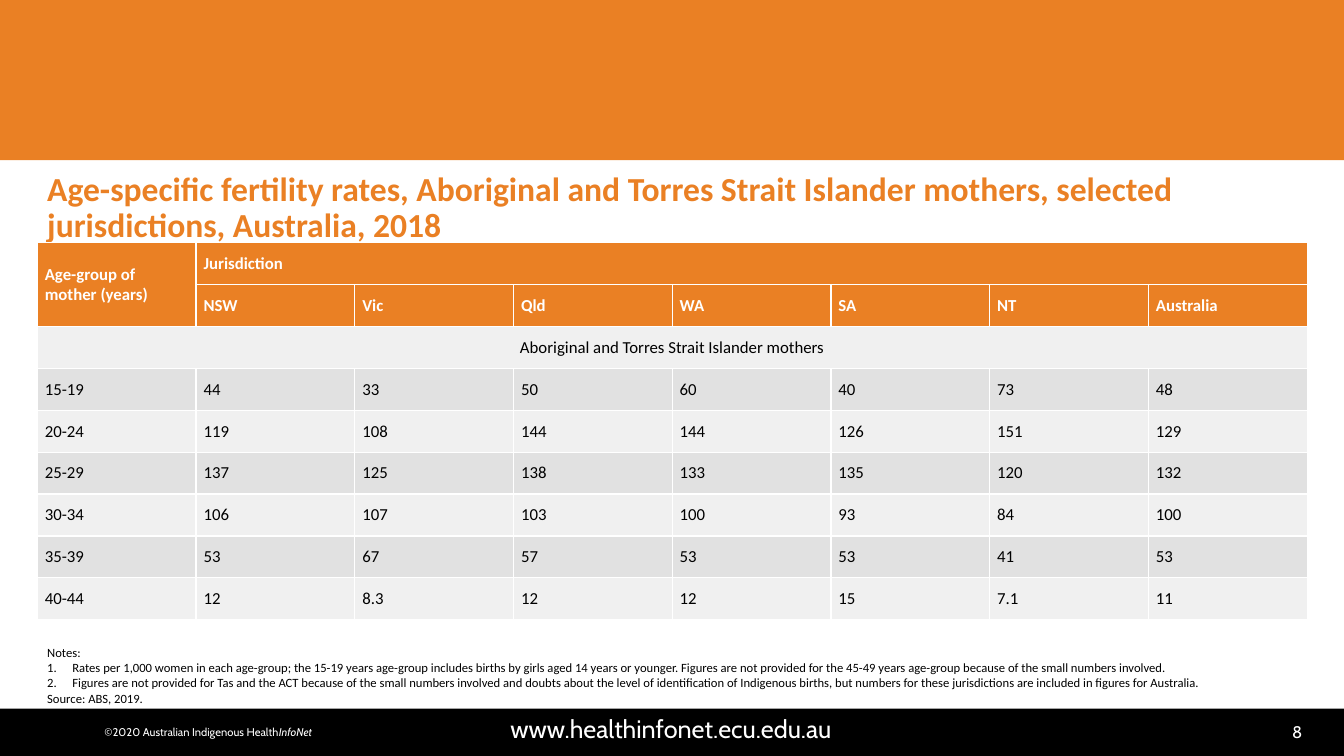
from lxml import etree
from pptx import Presentation
from pptx import util as u
from pptx.dml.color import RGBColor
from pptx.enum import shapes, text
from pptx.oxml.ns import qn

COLOURS = {"orange": "EA8024", "black": "000000", "white": "FFFFFF",
           "light": "F0F0F0", "grey": "E1E1E1"}
TITLE = ("Age-specific fertility rates, Aboriginal and Torres Strait Islander mothers, "
         "selected jurisdictions, Australia, 2018")
AGE_HEADING = "Age-group of\vmother (years)"
JURISDICTIONS = ["NSW", "Vic", "Qld", "WA", "SA", "NT", "Australia"]
GROUP = "Aboriginal and Torres Strait Islander mothers"
RATES = {
    "15-19": [44, 33, 50, 60, 40, 73, 48],
    "20-24": [119, 108, 144, 144, 126, 151, 129],
    "25-29": [137, 125, 138, 133, 135, 120, 132],
    "30-34": [106, 107, 103, 100, 93, 84, 100],
    "35-39": [53, 67, 57, 53, 53, 41, 53],
    "40-44": [12, 8.3, 12, 12, 15, 7.1, 11],
}
NOTES = [
    "Rates per 1,000 women in each age-group; the 15-19 years age-group includes births by "
    "girls aged 14 years or younger. Figures are not provided for the 45-49 years age-group "
    "because of the small numbers involved.",
    "Figures are not provided for Tas and the ACT because of the small numbers involved and "
    "doubts about the level of identification of Indigenous births, but numbers for these "
    "jurisdictions are included in figures for Australia.",
]
SOURCE = "Source: ABS, 2019."
WEBSITE = "www.healthinfonet.ecu.edu.au"
COPYRIGHT, COPYRIGHT_ITALIC = "©2020 Australian Indigenous Health", "InfoNet"
PAGE = "8"

WIDTH, HEIGHT = 33.87, 19.05
LEFT, CONTENT_WIDTH = 0.94, 32
TABLE_TOP, TABLE_HEIGHT = 6.12, 9.5
FOOTER_TOP = 17.86

TITLE_FONT = {"name": "Calibri", "size": u.Pt(24), "bold": True}
HEADING_FONT = {"name": "Calibri", "size": u.Pt(12), "bold": True}
BODY_FONT = {"name": "Calibri", "size": u.Pt(12), "bold": False}
NOTE_FONT = {"name": "Calibri", "size": u.Pt(9)}
PAGE_FONT = {"name": "Cabin", "size": u.Pt(12)}
WEBSITE_FONT = {"name": "Cabin", "size": u.Pt(18)}
COPYRIGHT_FONT = {"name": "Cabin", "size": u.Pt(8)}

ALIGN, ANCHOR = text.PP_ALIGN, text.MSO_ANCHOR


def rgb(colour):
    return RGBColor.from_string(COLOURS[colour])


def style(font, formats, colour):
    for attribute, value in formats.items():
        setattr(font, attribute, value)
    font.color.rgb = rgb(colour)


def add_bar(slide, box, colour):
    bar = slide.shapes.add_shape(shapes.MSO_SHAPE.RECTANGLE, *map(u.Cm, box))
    bar.shadow.inherit = False
    bar.fill.solid()
    bar.fill.fore_color.rgb = rgb(colour)
    bar.line.fill.background()


def add_text(slide, box, lines, formats, colour, align=ALIGN.LEFT,
             anchor=ANCHOR.MIDDLE, wrap=True):
    """Add a text box with one paragraph per line and return its paragraphs."""
    frame = slide.shapes.add_textbox(*map(u.Cm, box)).text_frame
    frame.word_wrap = wrap
    frame.vertical_anchor = anchor
    frame.text = "\n".join(lines)
    for paragraph in frame.paragraphs:
        paragraph.alignment = align
        for run in paragraph.runs:
            style(run.font, formats, colour)
    return frame.paragraphs


def number(paragraph):
    properties = paragraph._p.get_or_add_pPr()
    properties.set("marL", str(u.Cm(0.635)))
    properties.set("indent", str(-u.Cm(0.635)))
    etree.SubElement(properties, qn("a:buAutoNum"), type="arabicPeriod")


def add_rates(slide):
    blanks = [""] * len(JURISDICTIONS)
    rows = [[AGE_HEADING, "Jurisdiction"] + blanks[1:], [""] + JURISDICTIONS,
            [GROUP] + blanks]
    rows += [[age] + rates for age, rates in RATES.items()]
    last = len(JURISDICTIONS)
    table = slide.shapes.add_table(
        len(rows), last + 1, u.Cm(LEFT), u.Cm(TABLE_TOP),
        u.Cm(CONTENT_WIDTH), u.Cm(TABLE_HEIGHT)).table
    table.cell(0, 0).merge(table.cell(1, 0))
    table.cell(0, 1).merge(table.cell(0, last))
    table.cell(2, 0).merge(table.cell(2, last))
    for r, row in enumerate(rows):
        heading = r < 2
        fill = "orange" if heading else ("light", "grey")[r % 2]
        for c, value in enumerate(row):
            cell = table.cell(r, c)
            cell.fill.solid()
            cell.fill.fore_color.rgb = rgb(fill)
            cell.vertical_anchor = ANCHOR.MIDDLE
            cell.margin_left = cell.margin_right = u.Cm(0.19)
            cell.margin_top = cell.margin_bottom = 0
            paragraph = cell.text_frame.paragraphs[0]
            paragraph.space_after = u.Pt(5)
            paragraph.alignment = ALIGN.CENTER if value == GROUP else ALIGN.LEFT
            paragraph.text = str(value)
            style(paragraph.font, HEADING_FONT if heading else BODY_FONT,
                  "white" if heading else "black")
            for run in paragraph.runs:
                style(run.font, HEADING_FONT if heading else BODY_FONT,
                      "white" if heading else "black")


def main():
    deck = Presentation()
    deck.slide_width, deck.slide_height = u.Cm(WIDTH), u.Cm(HEIGHT)
    slide = deck.slides.add_slide(deck.slide_layouts[6])

    add_bar(slide, (-0.08, 0, WIDTH + 0.08, 4.04), "orange")
    add_bar(slide, (0, FOOTER_TOP, WIDTH, HEIGHT - FOOTER_TOP), "black")
    add_text(slide, (30.35, 18.06, 2.72, 0.76), [PAGE], PAGE_FONT, "white", ALIGN.RIGHT)
    add_text(slide, (1.57, FOOTER_TOP, 30.68, 0.99), [WEBSITE], WEBSITE_FONT, "white",
             ALIGN.CENTER)
    copyright_line = add_text(slide, (2.34, 18.14, 5.82, 0.6), [COPYRIGHT],
                              COPYRIGHT_FONT, "white", ALIGN.CENTER, wrap=False)[0]
    italic = copyright_line.add_run()
    italic.text = COPYRIGHT_ITALIC
    style(italic.font, {**COPYRIGHT_FONT, "italic": True}, "white")

    title = add_text(slide, (LEFT, 4.19, CONTENT_WIDTH, 2.13), [TITLE], TITLE_FONT, "orange")
    title[0].line_spacing = 0.9
    add_rates(slide)
    notes = add_text(slide, (LEFT, 16.13, CONTENT_WIDTH, 1.8), ["Notes:", *NOTES, SOURCE],
                     NOTE_FONT, "black", anchor=ANCHOR.TOP)
    for note in notes[1:-1]:
        number(note)

    deck.save("out.pptx")


if __name__ == "__main__":
    main()
